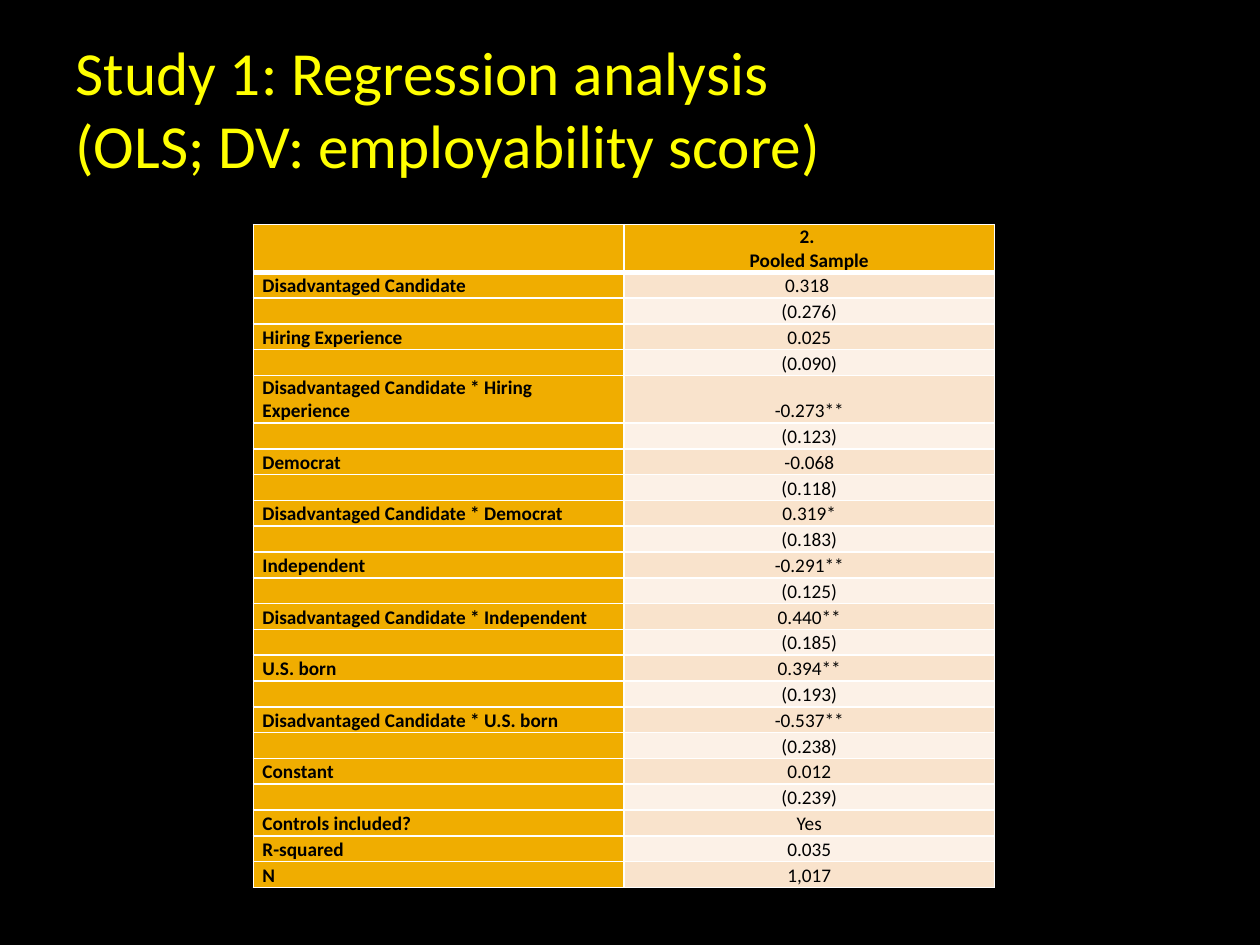
from lxml.etree import SubElement
from pptx import Presentation
from pptx.dml.color import RGBColor
from pptx.enum.text import MSO_ANCHOR as Anchor, MSO_AUTO_SIZE as AutoSize, PP_ALIGN as Align
from pptx.oxml.ns import qn
from pptx.util import Cm, Pt

BLACK = RGBColor(0x00, 0x00, 0x00)
WHITE = RGBColor(0xFF, 0xFF, 0xFF)
YELLOW = RGBColor(0xFF, 0xFF, 0x00)
GOLD = RGBColor(0xF0, 0xAD, 0x00)
PEACH = RGBColor(0xF9, 0xE3, 0xCC)
CREAM = RGBColor(0xFC, 0xF1, 0xE7)

FONT = "Calibri"
TABLE_SIZE = Pt(11)
SINGLE_ROW, DOUBLE_ROW = Cm(0.52), Cm(0.94)
COLUMN = Cm(7.47)

TITLE = "Study 1: Regression analysis \v(OLS; DV: employability score)"
HEADER = ("", "2. \nPooled Sample")
WRAPPED_LABEL = "Disadvantaged Candidate * Hiring Experience"
# Term, coefficient, standard error
ESTIMATES = [
    ("Disadvantaged Candidate", "0.318 ", "(0.276)"),
    ("Hiring Experience", "0.025", "(0.090)"),
    (WRAPPED_LABEL, "-0.273**", "(0.123)"),
    ("Democrat", "-0.068", "(0.118)"),
    ("Disadvantaged Candidate * Democrat", "0.319*", "(0.183)"),
    ("Independent", "-0.291**", "(0.125)"),
    ("Disadvantaged Candidate * Independent", "0.440**", "(0.185)"),
    ("U.S. born", "0.394**", "(0.193)"),
    ("Disadvantaged Candidate * U.S. born", "-0.537**", "(0.238)"),
    ("Constant", "0.012", "(0.239)"),
]
MODEL_FACTS = [("Controls included?", "Yes"), ("R-squared", "0.035"), ("N", "1,017")]


def format_runs(paragraph, size, color, bold=False):
    for run in paragraph.runs:
        run.font.name = FONT
        run.font.size = size
        run.font.bold = bold
        run.font.color.rgb = color


def add_title(slide):
    title = slide.shapes.title
    title.left, title.top, title.width, title.height = Cm(1.27), Cm(0.43), Cm(22.86), Cm(3.48)
    frame = title.text_frame
    frame.text = TITLE
    frame.word_wrap = True
    frame.auto_size = AutoSize.NONE
    frame.vertical_anchor = Anchor.MIDDLE
    frame.margin_left = Cm(0.25)
    frame.margin_right = frame.margin_top = frame.margin_bottom = Cm(0.13)
    paragraph = frame.paragraphs[0]
    paragraph.alignment = Align.LEFT
    format_runs(paragraph, Pt(35), YELLOW)


def set_borders(cell, top, bottom):
    """Draw white cell borders; top and bottom are widths in points."""
    for side, width in (("L", 1), ("R", 1), ("T", top), ("B", bottom)):
        line = SubElement(cell._tc.get_or_add_tcPr(), qn(f"a:ln{side}"), w=str(Pt(width)))
        fill = SubElement(line, qn("a:solidFill"))
        SubElement(fill, qn("a:srgbClr"), val=str(WHITE))


def fill_cell(cell, text, color, bold, alignment):
    cell.fill.solid()
    cell.fill.fore_color.rgb = color
    cell.vertical_anchor = Anchor.BOTTOM
    cell.margin_left = cell.margin_right = Cm(0.18)
    cell.margin_top = cell.margin_bottom = 0
    cell.text_frame.text = text
    for paragraph in cell.text_frame.paragraphs:
        paragraph.alignment = alignment
        format_runs(paragraph, TABLE_SIZE, BLACK, bold)
        if not text:  # keeps an empty row as low as the others
            SubElement(paragraph._p, qn("a:endParaRPr"), sz=str(int(TABLE_SIZE.pt * 100)))


def add_regression_table(slide):
    rows = [HEADER]
    for term, coefficient, error in ESTIMATES:
        rows += [(term, coefficient), ("", error)]
    rows += MODEL_FACTS

    heights = [DOUBLE_ROW if label == WRAPPED_LABEL or index == 0 else SINGLE_ROW
               for index, (label, _) in enumerate(rows)]
    table = slide.shapes.add_table(
        len(rows), 2, Cm(5.11), Cm(4.53), 2 * COLUMN, sum(heights)).table
    for column in table.columns:
        column.width = COLUMN

    for index, (label, value) in enumerate(rows):
        table.rows[index].height = heights[index]
        is_header = index == 0
        label_cell, value_cell = table.cell(index, 0), table.cell(index, 1)
        for cell in (label_cell, value_cell):
            set_borders(cell, top=3 if index == 1 else 1, bottom=3 if is_header else 1)
        band = GOLD if is_header else PEACH if index % 2 else CREAM
        fill_cell(label_cell, label, GOLD, True, Align.LEFT)
        fill_cell(value_cell, value, band, is_header, Align.CENTER)


def main():
    deck = Presentation()
    deck.slide_width, deck.slide_height = Cm(25.4), Cm(19.05)
    slide = deck.slides.add_slide(deck.slide_layouts[5])  # title only
    slide.background.fill.solid()
    slide.background.fill.fore_color.rgb = BLACK
    add_title(slide)
    add_regression_table(slide)
    deck.save("out.pptx")


if __name__ == "__main__":
    main()
